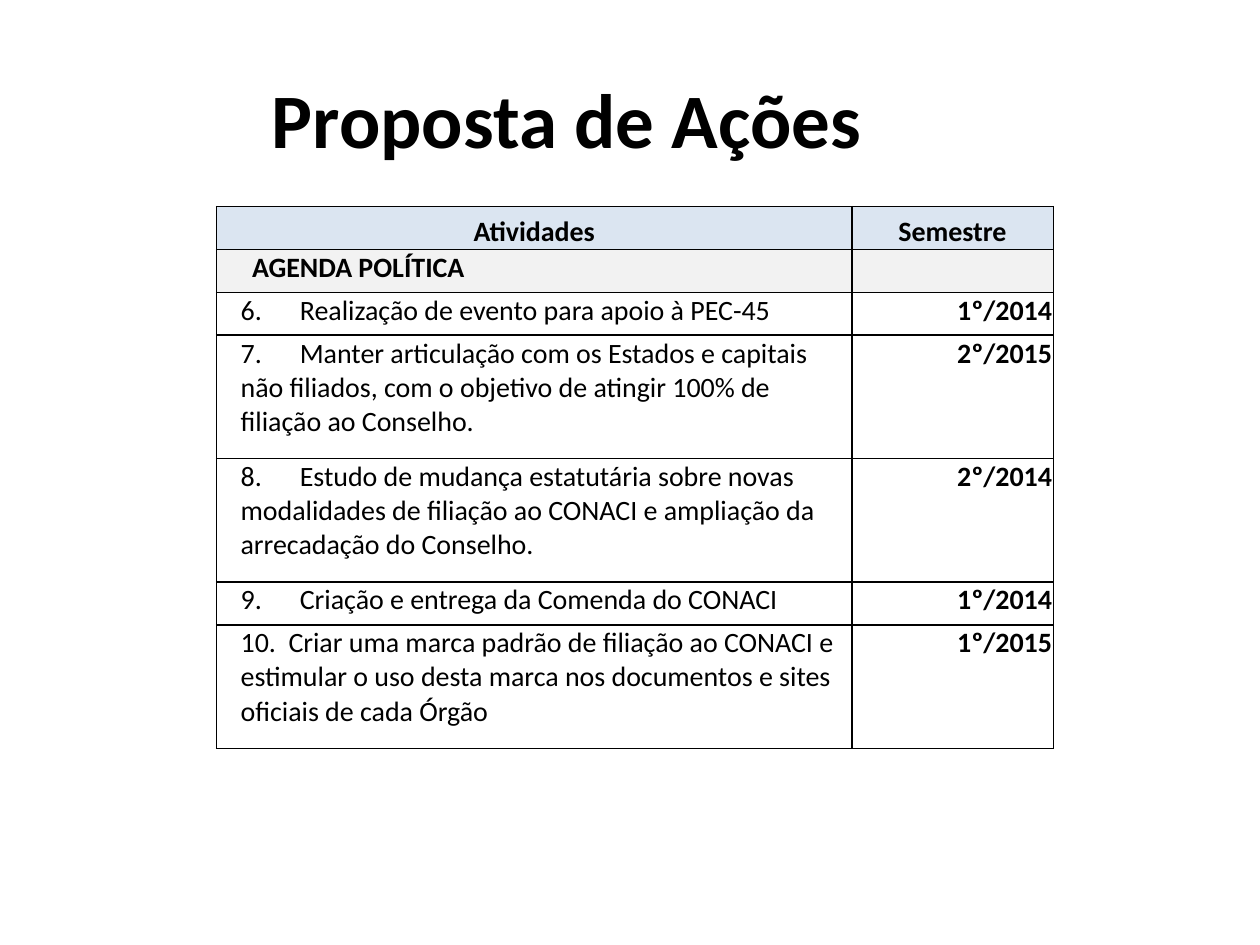
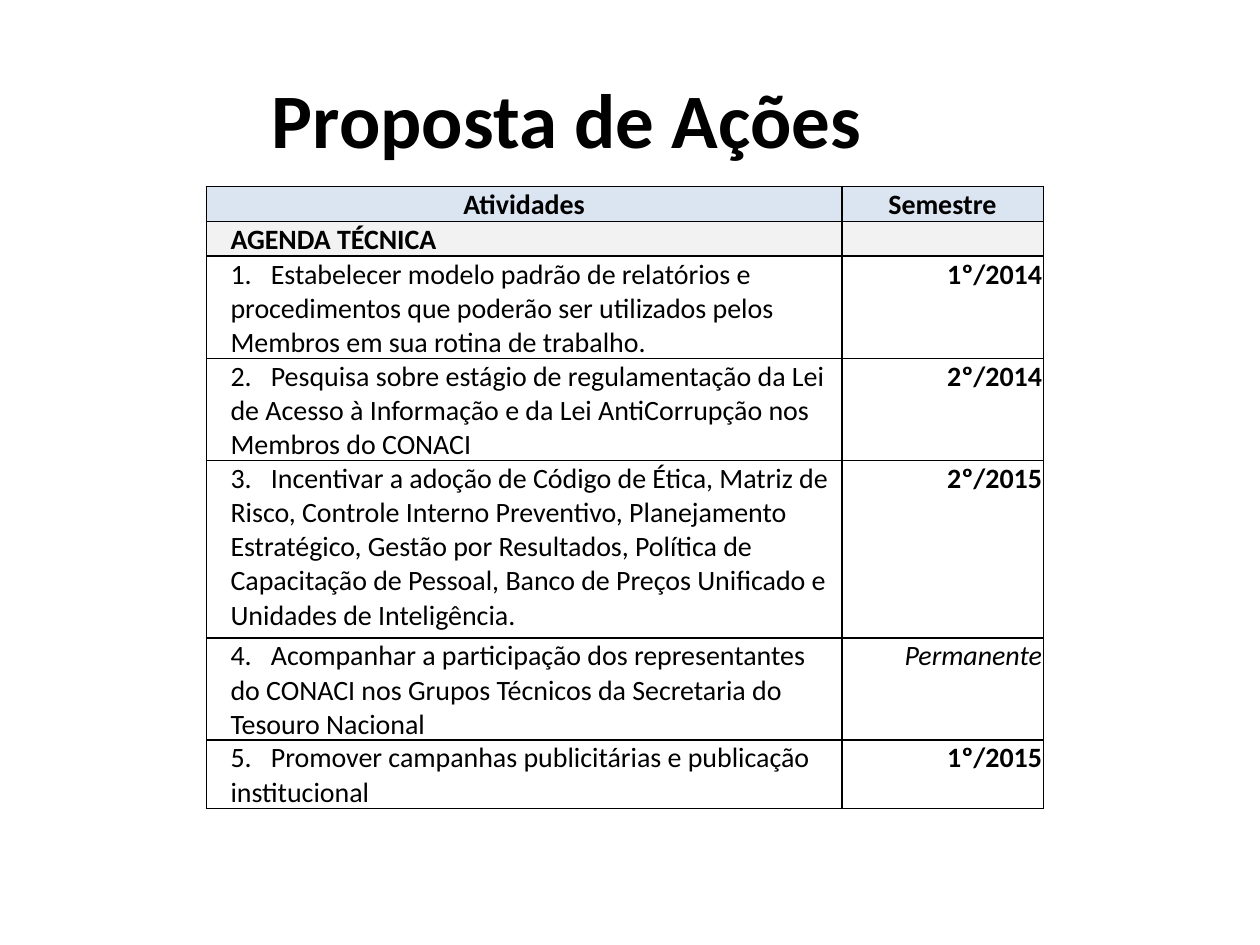
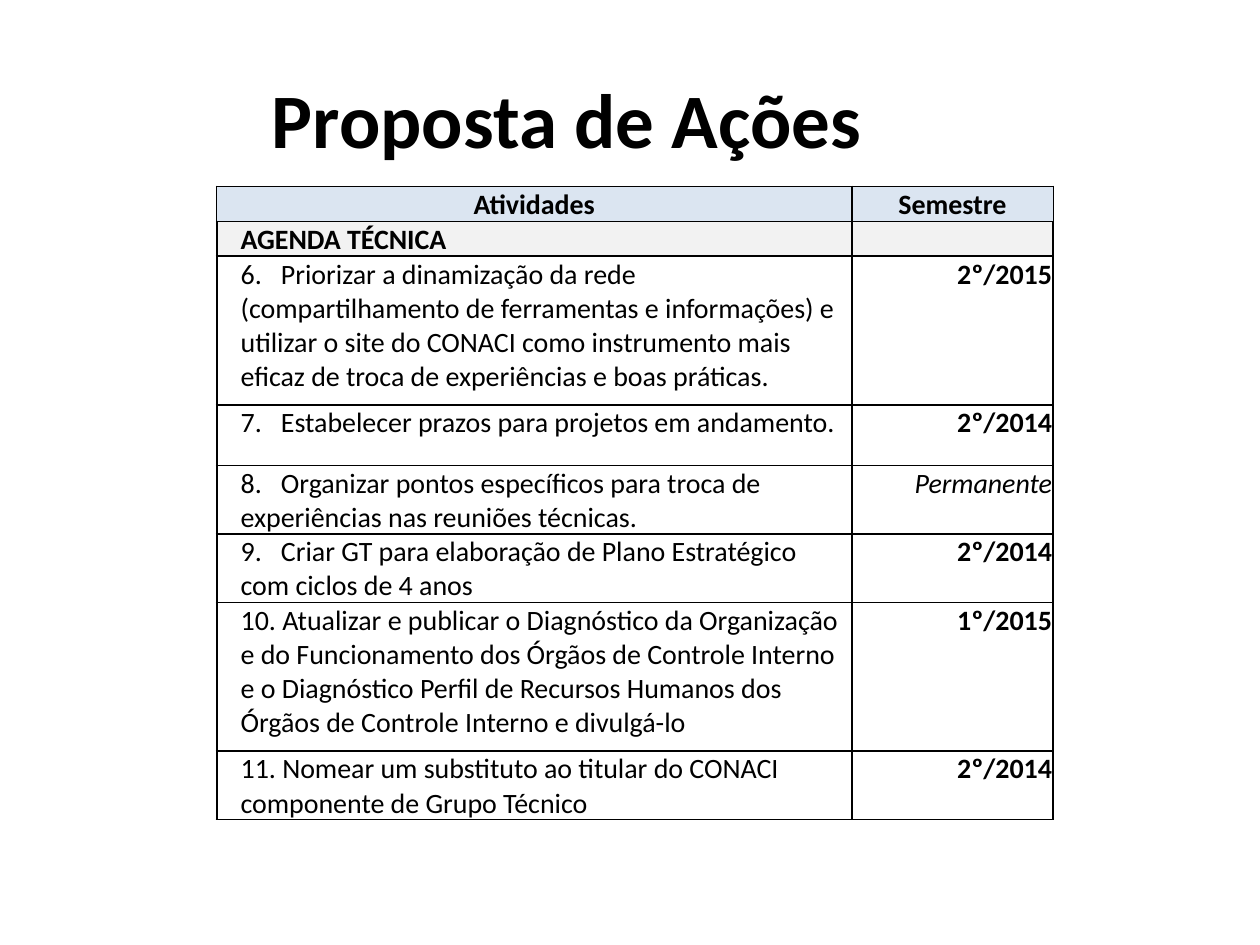
from dataclasses import dataclass

import pptx
import pptx.dml.color
import pptx.enum.text
import pptx.oxml
import pptx.oxml.ns
import pptx.util
from pptx.util import Inches

ALIGN = pptx.enum.text.PP_ALIGN
ANCHOR = pptx.enum.text.MSO_ANCHOR


@dataclass(frozen=True)
class Theme:
    font: str = "Calibri"
    ink: str = "000000"
    header_fill: str = "DBE5F1"
    section_fill: str = "F2F2F2"
    title_size: int = 44
    table_size: int = 16
    thin: float = 1
    thick: float = 1.5


@dataclass(frozen=True)
class Action:
    number: int
    text: str
    term: str
    height: float
    tab: float | None = 0.32  # None puts a plain space after the number


@dataclass(frozen=True)
class Agenda:
    section: str
    left: float
    top: float
    height: float
    head_height: float
    actions: list[Action]
    section_indent: float = 0.19
    side_width: float = Theme.thin  # outer border beside the body rows


@dataclass(frozen=True)
class CellStyle:
    align: int = ALIGN.LEFT
    anchor: int = ANCHOR.TOP
    indent: float = 0.01
    bold: bool = False
    italic: bool = False
    fill: str | None = None
    tab: float | None = None


THEME = Theme()
TITLE = "Proposta de Ações"
HEADINGS = ("Atividades", "Semestre")
COLUMN_WIDTHS = (5.04, 1.6)
ACTION_INDENT = 0.19
PERMANENT = "Permanente"

# Content
AGENDAS = [
    Agenda("AGENDA POLÍTICA", 1.72, 1.64, 4.3, 0.34, [
        Action(6, "Realização de evento para apoio à PEC-45", "1º/2014", 0.34, 0.47),
        Action(7, "Manter articulação com os Estados e capitais não filiados, com o "
                  "objetivo de atingir 100% de filiação ao Conselho.", "2º/2015", 0.98, 0.47),
        Action(8, "Estudo de mudança estatutária sobre novas modalidades de filiação ao "
                  "CONACI e ampliação da arrecadação do Conselho.", "2º/2014", 0.98, 0.47),
        Action(9, "Criação e entrega da Comenda do CONACI", "1º/2014", 0.34, 0.47),
        Action(10, "Criar uma marca padrão de filiação ao CONACI e estimular o uso desta "
                   "marca nos documentos e sites oficiais de cada Órgão", "1º/2015", 0.98, 0.38),
    ], section_indent=0.28),
    Agenda("AGENDA TÉCNICA", 1.64, 1.48, 4.94, 0.25, [
        Action(1, "Estabelecer modelo padrão de relatórios e procedimentos que poderão ser "
                  "utilizados pelos Membros em sua rotina de trabalho.", "1º/2014", 0.71),
        Action(2, "Pesquisa sobre estágio de regulamentação da Lei de Acesso à Informação e "
                  "da Lei AntiCorrupção nos Membros do CONACI", "2º/2014", 0.71),
        Action(3, "Incentivar a adoção de Código de Ética, Matriz de Risco, Controle Interno "
                  "Preventivo, Planejamento Estratégico, Gestão por Resultados, Política de "
                  "Capacitação de Pessoal, Banco de Preços Unificado e Unidades de "
                  "Inteligência.", "2º/2015", 1.41),
        Action(4, "Acompanhar a participação dos representantes do CONACI nos Grupos Técnicos "
                  "da Secretaria do Tesouro Nacional", PERMANENT, 0.71),
        Action(5, "Promover campanhas publicitárias e publicação institucional",
               "1º/2015", 0.48),
    ]),
    Agenda("AGENDA TÉCNICA", 1.72, 1.48, 5.03, 0.25, [
        Action(6, "Priorizar a dinamização da rede (compartilhamento de ferramentas e "
                  "informações) e utilizar o site do CONACI como instrumento mais eficaz de "
                  "troca de experiências e boas práticas.", "2º/2015", 1.18),
        Action(7, "Estabelecer prazos para projetos em andamento.", "2º/2014", 0.48),
        Action(8, "Organizar pontos específicos para troca de experiências nas reuniões "
                  "técnicas.", PERMANENT, 0.48),
        Action(9, "Criar GT para elaboração de Plano Estratégico com ciclos de 4 anos",
               "2º/2014", 0.48),
        Action(10, "Atualizar e publicar o Diagnóstico da Organização e do Funcionamento dos "
                   "Órgãos de Controle Interno e o Diagnóstico Perfil de Recursos Humanos dos "
                   "Órgãos de Controle Interno e divulgá-lo", "1º/2015", 1.18, None),
        Action(11, "Nomear um substituto ao titular do CONACI componente de Grupo Técnico",
               "2º/2014", 0.48, None),
    ], side_width=THEME.thick),
]


def format_text(para, size: int, bold: bool, italic: bool = False) -> None:
    for span in para.runs:
        span.font.name = THEME.font
        span.font.size = pptx.util.Pt(size)
        span.font.bold = bold
        span.font.italic = italic
        span.font.color.rgb = pptx.dml.color.RGBColor.from_string(THEME.ink)


def add_title(page) -> None:
    box = page.shapes.add_textbox(Inches(0), Inches(0.31), Inches(9), Inches(1.25))
    frame = box.text_frame
    frame.word_wrap = True
    frame.vertical_anchor = ANCHOR.MIDDLE
    frame.text = TITLE
    para = frame.paragraphs[0]
    para.alignment = ALIGN.CENTER
    format_text(para, THEME.title_size, bold=True)


def add_borders(cell, left: float, right: float) -> None:
    widths = {"L": left, "R": right, "T": THEME.thin, "B": THEME.thin}
    properties = cell._tc.get_or_add_tcPr()
    for side, width in widths.items():
        properties.append(pptx.oxml.parse_xml(
            f'<a:ln{side} {pptx.oxml.ns.nsdecls("a")} w="{pptx.util.Pt(width)}">'
            f'<a:solidFill><a:srgbClr val="{THEME.ink}"/></a:solidFill></a:ln{side}>'))


def add_tab_stop(para, position: float) -> None:
    para._p.get_or_add_pPr().append(pptx.oxml.parse_xml(
        f'<a:tabLst {pptx.oxml.ns.nsdecls("a")}>'
        f'<a:tab pos="{Inches(position)}" algn="l"/></a:tabLst>'))


def fill_cell(cell, text: str, style: CellStyle) -> None:
    cell.margin_left = Inches(style.indent)
    cell.margin_top = cell.margin_right = Inches(0.01)
    cell.margin_bottom = Inches(0)
    cell.vertical_anchor = style.anchor
    if style.fill:
        cell.fill.solid()
        cell.fill.fore_color.rgb = pptx.dml.color.RGBColor.from_string(style.fill)
    else:
        cell.fill.background()
    para = cell.text_frame.paragraphs[0]
    para.alignment = style.align
    if style.tab:
        add_tab_stop(para, style.tab)
    if text:
        para.text = text
        format_text(para, THEME.table_size, style.bold, style.italic)
    else:  # an empty cell keeps the table's line height
        para._p.append(pptx.oxml.parse_xml(
            f'<a:endParaRPr {pptx.oxml.ns.nsdecls("a")} sz="{THEME.table_size * 100}"/>'))


def add_agenda(page, agenda: Agenda) -> None:
    heights = [agenda.head_height] * 2 + [action.height for action in agenda.actions]
    table = page.shapes.add_table(
        len(heights), len(COLUMN_WIDTHS), Inches(agenda.left), Inches(agenda.top),
        Inches(sum(COLUMN_WIDTHS)), Inches(agenda.height)).table
    table.first_row = table.horz_banding = False
    for column, width in zip(table.columns, COLUMN_WIDTHS):
        column.width = Inches(width)

    # Row heights and borders
    for index, (row, height) in enumerate(zip(table.rows, heights)):
        row.height = Inches(height)
        side = agenda.side_width if index else THEME.thin
        add_borders(row.cells[0], side, THEME.thick)
        add_borders(row.cells[1], THEME.thick, side)

    # Heading and section rows
    heading = CellStyle(ALIGN.CENTER, ANCHOR.BOTTOM, bold=True, fill=THEME.header_fill)
    for column, text in enumerate(HEADINGS):
        fill_cell(table.cell(0, column), text, heading)
    section = CellStyle(indent=agenda.section_indent, bold=True, fill=THEME.section_fill)
    fill_cell(table.cell(1, 0), agenda.section, section)
    fill_cell(table.cell(1, 1), "", CellStyle(fill=THEME.section_fill))

    # Actions
    for index, action in enumerate(agenda.actions, start=2):
        gap = "\t" if action.tab else " "
        fill_cell(table.cell(index, 0), f"{action.number}.{gap}{action.text}",
                  CellStyle(indent=ACTION_INDENT, tab=action.tab))
        permanent = action.term == PERMANENT
        fill_cell(table.cell(index, 1), action.term,
                  CellStyle(ALIGN.RIGHT, bold=not permanent, italic=permanent))


def main() -> None:
    deck = pptx.Presentation()
    deck.slide_width, deck.slide_height = Inches(10), Inches(7.5)
    for agenda in AGENDAS:
        page = deck.slides.add_slide(deck.slide_layouts[6])
        add_title(page)
        add_agenda(page, agenda)
    deck.save("out.pptx")


if __name__ == "__main__":
    main()
